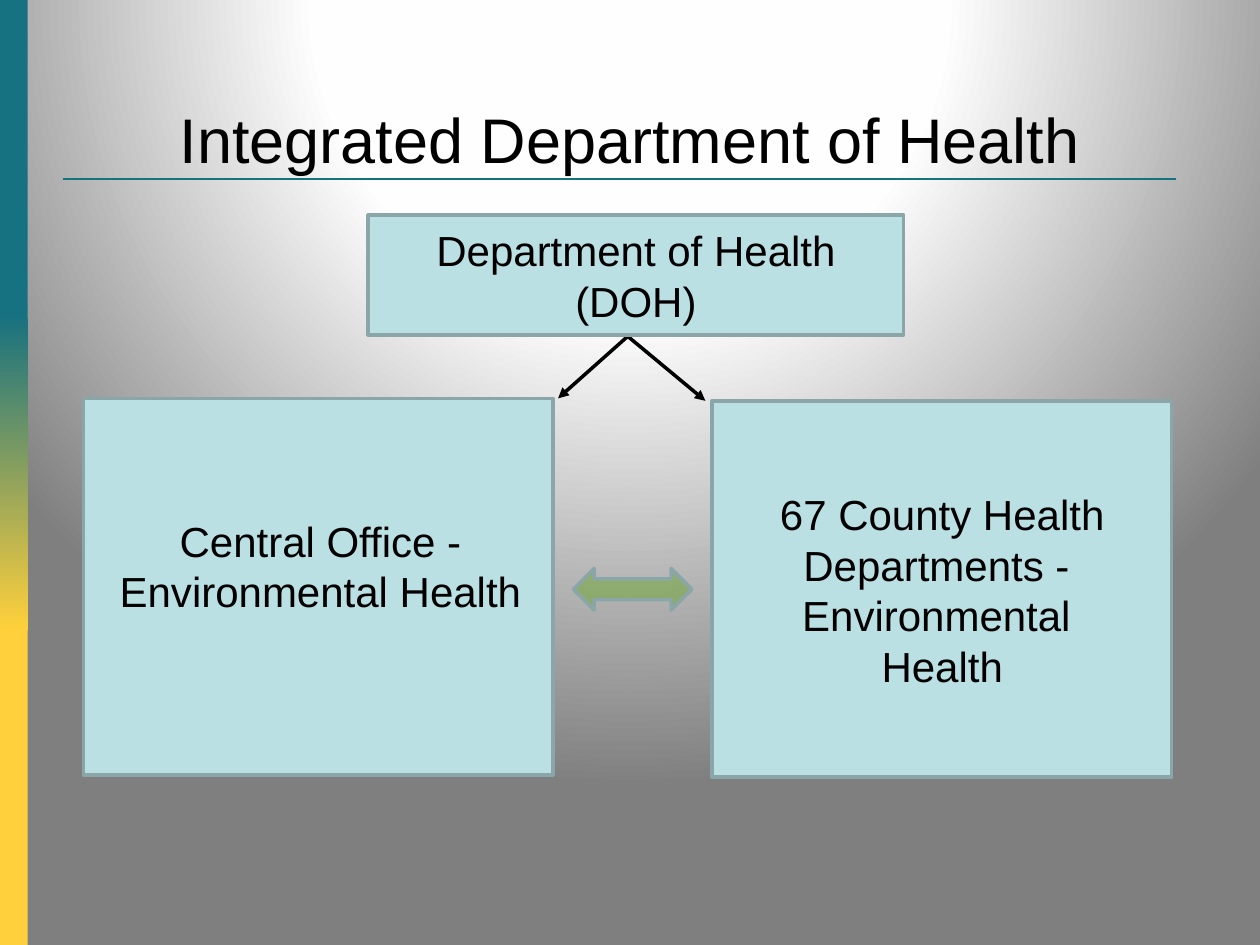
from pptx import Presentation
from pptx.dml.color import RGBColor
from pptx.enum.shapes import MSO_CONNECTOR, MSO_SHAPE
from pptx.enum.text import MSO_ANCHOR, MSO_AUTO_SIZE, PP_ALIGN
from pptx.oxml import parse_xml
from pptx.oxml.ns import nsdecls, qn
from pptx.oxml.xmlchemy import OxmlElement
from pptx.util import Cm, Pt

COLOURS = {
    "teal": "167180",
    "yellow": "FFD03B",
    "box": "BBE0E3",
    "outline": "8AA6A8",
    "green": "6BA42C",
    "black": "000000",
}
BACKGROUND_STOPS = [(0, "FFFFFF"), (40, "FEFEFE"), (100, "7F7F7F")]


def rgb(name):
    return RGBColor.from_string(COLOURS[name])


def write_text(shape, text, size=24, anchor=MSO_ANCHOR.TOP, grow=False):
    """Fill a shape with centred black text, one paragraph per line."""
    frame = shape.text_frame
    frame.word_wrap = True
    frame.vertical_anchor = anchor
    if grow:
        frame.auto_size = MSO_AUTO_SIZE.SHAPE_TO_FIT_TEXT
    for index, line in enumerate(text.split("\n")):
        paragraph = frame.paragraphs[0] if index == 0 else frame.add_paragraph()
        paragraph.alignment = PP_ALIGN.CENTER
        span = paragraph.add_run()
        span.text = line
        span.font.name = "Arial"
        span.font.size = Pt(size)
        span.font.color.rgb = rgb("black")


class Painter:
    def __init__(self, page):
        self.page = page
        self.outline_width = Pt(2)

    def background(self, stops):
        """Radial gradient centred above the top edge of the page."""
        self.page.background.fill.gradient()
        old = self.page.element.find(".//" + qn("a:gradFill"))
        stop_xml = "".join(
            f'<a:gs pos="{place * 1000}"><a:srgbClr val="{colour}"/></a:gs>'
            for place, colour in stops
        )
        new = parse_xml(
            f'<a:gradFill {nsdecls("a")} rotWithShape="1"><a:gsLst>{stop_xml}</a:gsLst>'
            '<a:path path="circle"><a:fillToRect l="50000" t="-80000" r="50000" b="180000"/>'
            "</a:path></a:gradFill>"
        )
        old.getparent().replace(old, new)

    def shape(self, left, top, width, height, fill, kind=MSO_SHAPE.RECTANGLE,
              outlined=True, opacity=100):
        shape = self.page.shapes.add_shape(kind, Cm(left), Cm(top), Cm(width), Cm(height))
        shape.shadow.inherit = False
        shape.fill.solid()
        shape.fill.fore_color.rgb = rgb(fill)
        if opacity < 100:
            alpha = OxmlElement("a:alpha")
            alpha.set("val", str(opacity * 1000))
            shape.element.spPr.find(qn("a:solidFill"))[0].append(alpha)
        if outlined:
            shape.line.color.rgb = rgb("outline")
            shape.line.width = self.outline_width
        else:
            shape.line.fill.background()
        return shape

    def fade(self, shape, upper, lower):
        """Replace the fill by a gradient that runs from top to bottom."""
        shape.fill.gradient()
        shape.fill.gradient_angle = 270
        for stop, name, place in zip(shape.fill.gradient_stops, (upper, lower), (0, 1)):
            stop.color.rgb = rgb(name)
            stop.position = place

    def line(self, start, end, colour, width, arrow=False):
        line = self.page.shapes.add_connector(
            MSO_CONNECTOR.STRAIGHT, *(Cm(value) for value in (*start, *end)))
        line.line.color.rgb = rgb(colour)
        line.line.width = Pt(width)
        if arrow:
            head = OxmlElement("a:tailEnd")
            head.set("type", "triangle")
            line.line._get_or_add_ln().append(head)
        line.element.spPr.append(OxmlElement("a:effectLst"))

    def text(self, left, top, width, height, text, **text_format):
        box = self.page.shapes.add_textbox(Cm(left), Cm(top), Cm(width), Cm(height))
        write_text(box, text, **text_format)


def main():
    deck = Presentation()
    deck.slide_width, deck.slide_height = Cm(25.4), Cm(19.05)
    page = deck.slides.add_slide(deck.slide_layouts[6])
    painter = Painter(page)
    painter.background(BACKGROUND_STOPS)

    painter.line((1.27, 3.61), (23.7, 3.61), "teal", 1.5)
    band_height = 19.05 / 3
    bands = [painter.shape(0, row * band_height, 0.56, band_height, colour, outlined=False)
             for row, colour in enumerate(("teal", "teal", "yellow"))]
    painter.fade(bands[1], "teal", "yellow")

    painter.shape(1.68, 8.03, 9.47, 7.59, "box")
    painter.shape(14.35, 8.08, 9.27, 7.59, "box")
    painter.shape(11.56, 11.46, 2.39, 0.84, "green",
                  kind=MSO_SHAPE.LEFT_RIGHT_ARROW, opacity=50)
    painter.line((12.8, 6.65), (11.25, 8.03), "black", 2, arrow=True)
    painter.line((11.68, 5.97), (14.22, 8.08), "black", 2, arrow=True)
    department = painter.shape(7.42, 4.34, 10.8, 2.41, "box")
    write_text(department, "Department of Health\n(DOH)", anchor=MSO_ANCHOR.MIDDLE)

    painter.text(1.85, 10.26, 9.22, 3.07, "Central Office -\nEnvironmental Health", grow=True)
    painter.text(14.45, 9.73, 9.09, 6.15,
                 "67 County Health\nDepartments - \nEnvironmental \nHealth", grow=True)
    painter.text(0.76, 1.9, 23.88, 1.78, "Integrated Department of Health",
                 size=36, anchor=MSO_ANCHOR.BOTTOM)

    deck.save("out.pptx")


if __name__ == "__main__":
    main()
